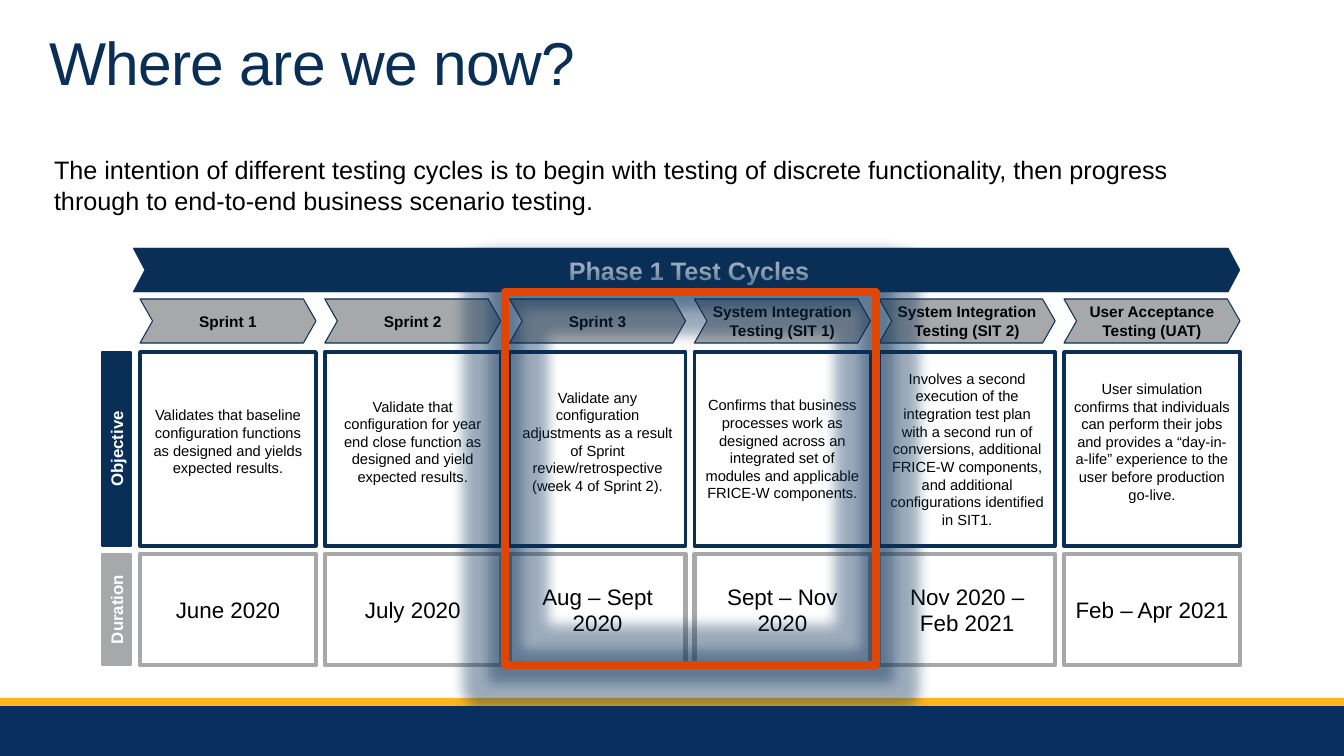
from lxml.etree import SubElement
from pptx import Presentation
from pptx.dml.color import RGBColor
from pptx.enum.shapes import MSO_SHAPE as Preset
from pptx.enum.text import MSO_ANCHOR as Anchor, PP_ALIGN as Align
from pptx.oxml.ns import qn
from pptx.util import Pt

PX = 914400 / 100.8
COLORS = {
    "navy": "092F57", "footer": "092F61", "gold": "FFB81C", "gray": "A7A8AA",
    "frame": "E14504", "white": "FFFFFF", "black": "000000",
}
CYCLES = [
    ("Sprint 1", "Validates that baseline configuration functions as designed and "
     "yields expected results.", 5, "June 2020"),
    ("Sprint 2", "Validate that configuration for year end close function as "
     "designed and yield expected results.", 5, "July 2020"),
    ("Sprint 3", "Validate any configuration adjustments as a result of Sprint "
     "review/retrospective (week 4 of Sprint 2).", 5, "Aug – Sept 2020"),
    ("System Integration\nTesting (SIT 1)", "Confirms that business processes work "
     "as designed across an integrated set of modules and applicable FRICE-W "
     "components.", 20, "Sept – Nov 2020"),
    ("System Integration\nTesting (SIT 2)", "Involves a second execution of the "
     "integration test plan with a second run of conversions, additional FRICE-W "
     "components, and additional configurations identified in SIT1.", 20,
     "Nov 2020 – Feb 2021"),
    ("User Acceptance\nTesting (UAT)", "User simulation confirms that individuals "
     "can perform their jobs and provides a “day-in-a-life” experience to the user "
     "before production go-live.", 5, "Feb – Apr 2021"),
]


def px(length):
    """Turn pixels into EMU."""
    return round(length * PX)


def color(name):
    """Look up a palette colour."""
    return RGBColor.from_string(COLORS[name])


def write(shape, text, size, ink="black", bold=False, align=Align.CENTER,
          insets=(10, 5, 10, 5), wrap=True):
    """Fill a shape with uniformly formatted, vertically centred text."""
    frame = shape.text_frame
    frame.text = text
    frame.word_wrap = wrap
    frame.vertical_anchor = Anchor.MIDDLE
    (frame.margin_left, frame.margin_top,
     frame.margin_right, frame.margin_bottom) = map(px, insets)
    for para in frame.paragraphs:
        para.alignment = align
        para.font.name = "Arial"
        para.font.size = Pt(size)
        para.font.bold = bold
        para.font.color.rgb = color(ink)


def add_block(page, preset, box, fill=None, line=None, width=1):
    """Add a flat preset shape in the given box."""
    shape = page.shapes.add_shape(preset, *map(px, box))
    shape.shadow.inherit = False
    if fill:
        shape.fill.solid()
        shape.fill.fore_color.rgb = color(fill)
    else:
        shape.fill.background()
    if line:
        shape.line.color.rgb = color(line)
        shape.line.width = Pt(width)
    else:
        shape.line.fill.background()
    return shape


def add_chevron(page, box, notch, fill, width):
    """Add a navy-outlined chevron."""
    chevron = add_block(page, Preset.CHEVRON, box, fill, "navy", width)
    chevron.adjustments[0] = notch
    return chevron


def add_heading(page, box):
    """Place the slide title."""
    title = page.shapes.title
    title.left, title.top, title.width, title.height = map(px, box)
    write(title, "Where are we now?", 43.2, "navy", align=Align.LEFT)
    title.text_frame.vertical_anchor = Anchor.TOP
    para = title.text_frame.paragraphs[0]
    para.line_spacing = 0.85
    para.runs[0]._r.get_or_add_rPr().set("spc", "-50")


def add_intro(page, box):
    """Place the introductory sentence."""
    intro = page.shapes.add_textbox(*map(px, box))
    write(intro, "The intention of different testing cycles is to begin with testing "
          "of discrete functionality, then progress through to end-to-end business "
          "scenario testing.", 18, align=Align.LEFT)
    intro.text_frame.paragraphs[0].space_after = Pt(6)


def add_row_label(page, box, text, fill):
    """Add a label that reads upwards beside a row."""
    label = add_block(page, Preset.RECTANGLE, box, fill, fill)
    write(label, text, 12, "white", bold=True)
    label.text_frame._txBody.bodyPr.set("vert", "vert270")


def add_cycle(page, box, cycle):
    """Stack one cycle's name, objective and duration."""
    left, top, width = box
    name, objective, inset, duration = cycle
    chevron = add_chevron(page, (left, top, width, 44), 0.285, "gray", 0.75)
    write(chevron, name, 11, bold=True, insets=(0, 0, 0, 0), wrap=False)
    card = add_block(page, Preset.RECTANGLE, (left, top + 53, width, 194),
                     "white", "navy", 2.5)
    write(card, objective, 10.5, insets=(10, inset, 10, 20))
    period = add_block(page, Preset.RECTANGLE, (left, top + 255, width, 111),
                       line="gray", width=3)
    write(period, duration, 16)


def add_highlight(page, box):
    """Frame the current cycles with a glowing outline."""
    frame = add_block(page, Preset.RECTANGLE, box, line="frame", width=6)
    effects = frame._element.spPr.find(qn("a:effectLst"))
    glow = SubElement(effects, qn("a:glow"), rad=str(px(25)))
    tint = SubElement(glow, qn("a:srgbClr"), val=COLORS["navy"])
    SubElement(tint, qn("a:alpha"), val="40000")


def add_timeline(page, box):
    """Lay out the phase banner, row labels, cycles and highlight."""
    left, top, width = box
    banner = add_chevron(page, (left + 31, top, width - 31, 44), 0.266, "navy", 0.25)
    write(banner, "Phase 1 Test Cycles", 18, "white", bold=True, insets=(15, 5, 10, 5))
    add_row_label(page, (left, top + 104, 29, 194), "Objective", "navy")
    add_row_label(page, (left, top + 306, 29, 111), "Duration", "gray")
    first, cycle_width = left + 38, 176
    pitch = (left + width - cycle_width - first) / (len(CYCLES) - 1)
    for index, cycle in enumerate(CYCLES):
        add_cycle(page, (first + index * pitch, top + 51, cycle_width), cycle)
    add_highlight(page, (left + 403, top + 44, 371, 373))


def add_footer(page, box):
    """Draw the footer band with its gold rule."""
    left, top, width, height = box
    add_block(page, Preset.RECTANGLE, (left, top + 8, width, height - 8), "footer")
    add_block(page, Preset.RECTANGLE, (left, top, width, 8), "gold")


def main():
    """Build and save the slide."""
    deck = Presentation()
    deck.slide_width, deck.slide_height = px(1344), px(756)
    page = deck.slides.add_slide(deck.slide_layouts[5])
    add_footer(page, (0, 698, 1344, 58))
    add_heading(page, (39, 31, 1268, 56))
    add_intro(page, (44, 131, 1159, 108))
    add_timeline(page, (102, 248, 1138))
    deck.save("out.pptx")


if __name__ == "__main__":
    main()
